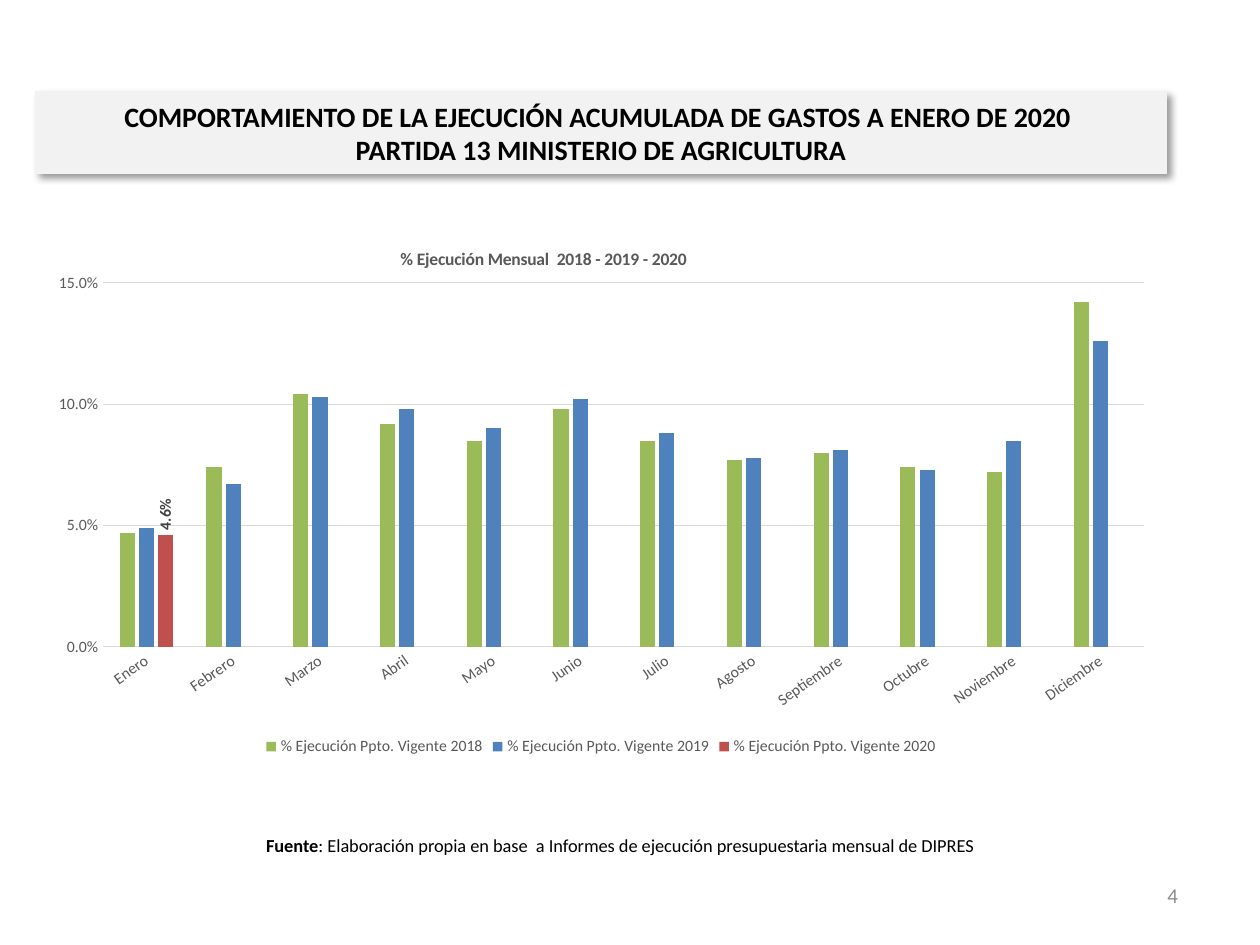
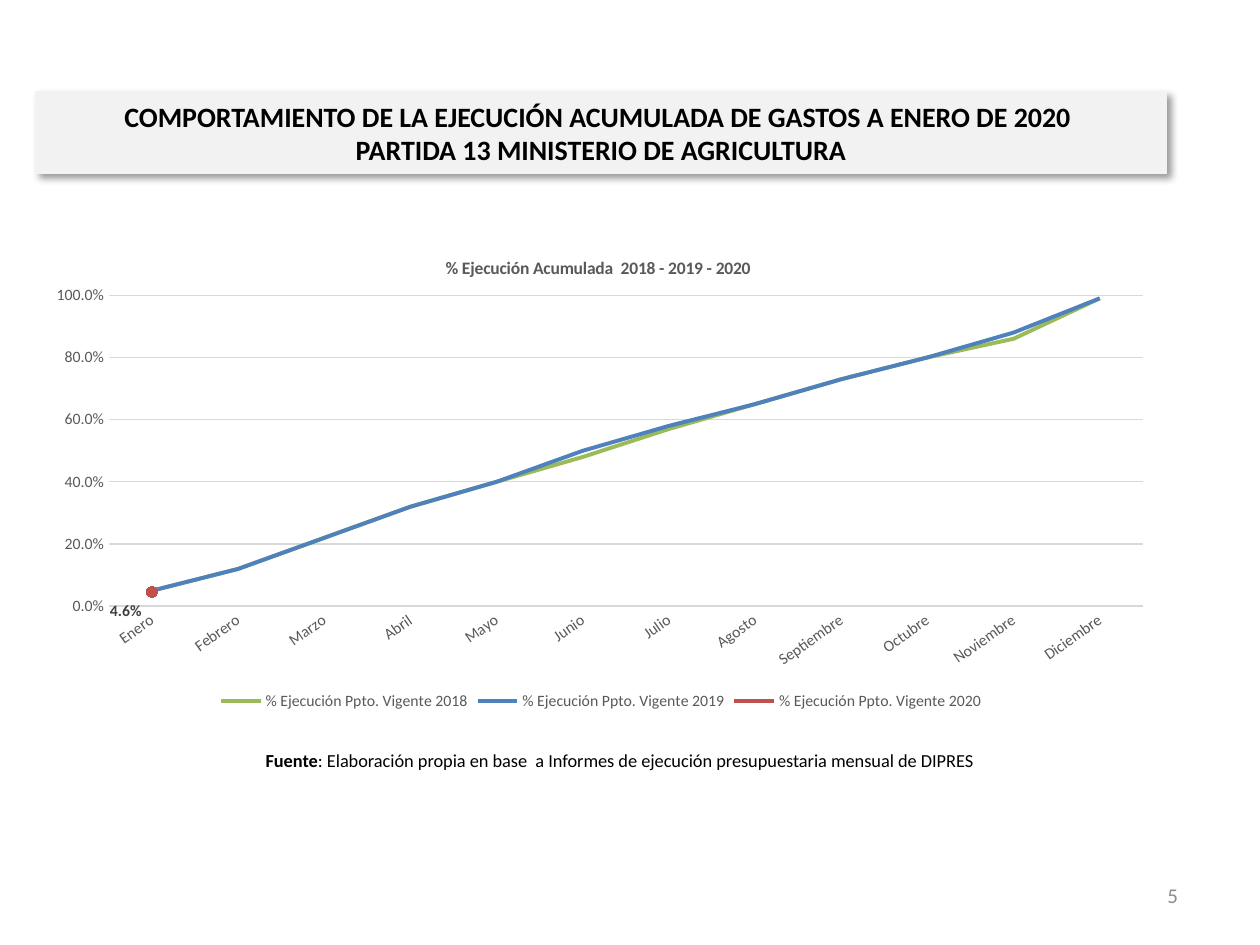
"""Build two slides on the budget execution of the agriculture ministry."""
from lxml.etree import SubElement
from pptx import Presentation
from pptx.chart.data import CategoryChartData
from pptx.dml.color import RGBColor
from pptx.enum.chart import (XL_CHART_TYPE, XL_LABEL_POSITION, XL_LEGEND_POSITION,
                             XL_MARKER_STYLE, XL_TICK_MARK)
from pptx.enum.shapes import MSO_SHAPE
from pptx.enum.text import MSO_ANCHOR, PP_ALIGN
from pptx.oxml import parse_xml
from pptx.oxml.ns import nsdecls, qn
from pptx.util import Cm, Pt

FONT = "Calibri"
BLACK = RGBColor(0x00, 0x00, 0x00)
BAND_GRAY = RGBColor(0xF2, 0xF2, 0xF2)
GRID_GRAY = RGBColor(0xD9, 0xD9, 0xD9)
AXIS_GRAY = RGBColor(0x59, 0x59, 0x59)
LABEL_GRAY = RGBColor(0x40, 0x40, 0x40)
NUMBER_GRAY = RGBColor(0x8C, 0x8C, 0x8C)
SERIES_COLORS = {
    2018: RGBColor(0x9B, 0xBB, 0x59),
    2019: RGBColor(0x4F, 0x81, 0xBD),
    2020: RGBColor(0xC0, 0x50, 0x4D),
}
PERCENT = "0.0%"
BAND_LEFT, BAND_WIDTH = Cm(0.71), Cm(22.81)
BAND_LINES = ("COMPORTAMIENTO DE LA EJECUCIÓN ACUMULADA DE GASTOS A ENERO DE 2020 ",
              "PARTIDA 13 MINISTERIO DE AGRICULTURA")
SOURCE_TEXT = (": Elaboración propia en base  a Informes de ejecución "
               "presupuestaria mensual de DIPRES")
MONTHS = ("Enero", "Febrero", "Marzo", "Abril", "Mayo", "Junio", "Julio", "Agosto",
          "Septiembre", "Octubre", "Noviembre", "Diciembre")
MONTHLY = {
    2018: (0.047, 0.074, 0.104, 0.092, 0.085, 0.098, 0.085, 0.077, 0.08, 0.074, 0.072, 0.142),
    2019: (0.049, 0.067, 0.103, 0.098, 0.09, 0.102, 0.088, 0.078, 0.081, 0.073, 0.085, 0.126),
    2020: (0.046,),
}
ACCUMULATED = {
    2018: (0.05, 0.12, 0.22, 0.32, 0.4, 0.48, 0.57, 0.65, 0.73, 0.8, 0.86, 0.99),
    2019: (0.05, 0.12, 0.22, 0.32, 0.4, 0.5, 0.58, 0.65, 0.73, 0.8, 0.88, 0.99),
    2020: (0.046,),
}


def style_font(font, size, color, bold=False):
    """Set the typeface, size, colour and weight of a font."""
    font.name, font.size, font.bold = FONT, Pt(size), bold
    font.color.rgb = color


def add_run(paragraph, text, size, color, bold=False):
    """Append one styled run to a paragraph."""
    run = paragraph.add_run()
    run.text = text
    style_font(run.font, size, color, bold)


def add_text_box(slide, left, top, width, height, alignment):
    """Add a wrapped, vertically centred text box and return its paragraph."""
    frame = slide.shapes.add_textbox(left, top, width, height).text_frame
    frame.word_wrap = True
    frame.vertical_anchor = MSO_ANCHOR.MIDDLE
    paragraph = frame.paragraphs[0]
    paragraph.alignment = alignment
    return paragraph


def add_shadow(shape):
    """Give a shape a soft shadow towards the lower right."""
    shape.shadow.inherit = False
    effects = shape._element.spPr.find(qn("a:effectLst"))
    shadow = SubElement(effects, qn("a:outerShdw"), blurRad=str(Pt(4)), dist=str(Pt(3)),
                        dir="2700000", algn="tl", rotWithShape="0")
    color = SubElement(shadow, qn("a:srgbClr"), val=str(BLACK))
    SubElement(color, qn("a:alpha"), val="40000")


def add_title_band(slide):
    """Add the grey band with the two-line title."""
    band = slide.shapes.add_shape(MSO_SHAPE.RECTANGLE, BAND_LEFT, Cm(1.85), BAND_WIDTH, Cm(1.65))
    add_shadow(band)
    band.fill.solid()
    band.fill.fore_color.rgb = BAND_GRAY
    band.line.color.rgb = BAND_GRAY
    band.line.width = Pt(0.75)
    band.text_frame.word_wrap = True
    band.text_frame.vertical_anchor = MSO_ANCHOR.MIDDLE
    paragraph = band.text_frame.paragraphs[0]
    paragraph.alignment = PP_ALIGN.CENTER
    first, second = BAND_LINES
    add_run(paragraph, first, 16, BLACK, True)
    paragraph.add_line_break()
    add_run(paragraph, second, 16, BLACK, True)


def add_source(slide, left, top, width, height):
    """Add the centred source line."""
    paragraph = add_text_box(slide, left, top, width, height, PP_ALIGN.CENTER)
    add_run(paragraph, "Fuente", 10.5, BLACK, True)
    add_run(paragraph, SOURCE_TEXT, 10.5, BLACK)


def add_slide(presentation, number):
    """Add a blank slide with its page number and title band."""
    slide = presentation.slides.add_slide(presentation.slide_layouts[6])
    paragraph = add_text_box(slide, Cm(18.08), Cm(17.53), Cm(5.92), Cm(1.02), PP_ALIGN.RIGHT)
    add_run(paragraph, str(number), 12, NUMBER_GRAY)
    add_title_band(slide)
    return slide


def make_layout(x, y, width=None, height=None):
    """Return a manual chart layout in fractions of the chart or label position."""
    layout = parse_xml(f"<c:layout {nsdecls('c')}><c:manualLayout/></c:layout>")
    settings = [("x", x), ("y", y)]
    if width:
        settings = [("layoutTarget", "inner"), ("xMode", "edge"), ("yMode", "edge"),
                    *settings, ("w", width), ("h", height)]
    for name, value in settings:
        SubElement(layout[0], qn(f"c:{name}"), val=str(value))
    return layout


def place_plot(chart, x, y, width, height):
    """Fix the inner plot area of a chart."""
    plot_area = chart._chartSpace.chart.plotArea
    for old_layout in plot_area.findall(qn("c:layout")):
        plot_area.remove(old_layout)
    plot_area.insert(0, make_layout(x, y, width, height))


def set_chart_title(chart, text, x, y):
    """Write the chart title and place its upper left corner."""
    title = chart.chart_title
    add_run(title.text_frame.paragraphs[0], text, 10, AXIS_GRAY, True)
    title.include_in_layout = False
    element = title._element
    for old_layout in element.findall(qn("c:layout")):
        element.remove(old_layout)
    layout = make_layout(x, y)
    for position, mode in enumerate(("xMode", "yMode")):
        layout[0].insert(position, layout.makeelement(qn(f"c:{mode}"), val="edge"))
    element.find(qn("c:tx")).addnext(layout)


def style_axes(chart, maximum, step, line_width):
    """Style both axes and the grid lines."""
    months, values = chart.category_axis, chart.value_axis
    for axis in (months, values):
        axis.major_tick_mark = axis.minor_tick_mark = XL_TICK_MARK.NONE
        style_font(axis.tick_labels.font, 9, AXIS_GRAY)
    months.format.line.color.rgb = GRID_GRAY
    months.format.line.width = Pt(line_width)
    months._element.find(qn("c:txPr")).find(qn("a:bodyPr")).set("rot", str(-35 * 60000))
    values.format.line.fill.background()
    values.minimum_scale, values.maximum_scale, values.major_unit = 0, maximum, step
    values.tick_labels.number_format = PERCENT
    values.tick_labels.number_format_is_linked = False
    values.major_gridlines.format.line.color.rgb = GRID_GRAY
    values.major_gridlines.format.line.width = Pt(0.75)


def add_chart(slide, chart_type, top, height, figures):
    """Add a chart of yearly series by month with a legend below."""
    data = CategoryChartData(number_format=PERCENT)
    data.categories = MONTHS
    for year, values in figures.items():
        padding = (None,) * (len(MONTHS) - len(values))
        data.add_series(f"% Ejecución Ppto. Vigente {year}", values + padding)
    chart = slide.shapes.add_chart(chart_type, BAND_LEFT, top, BAND_WIDTH, height, data).chart
    style_font(chart.font, 10, BLACK)
    chart.has_legend = True
    chart.legend.position = XL_LEGEND_POSITION.BOTTOM
    chart.legend.include_in_layout = False
    style_font(chart.legend.font, 9, AXIS_GRAY)
    return chart


def add_monthly_chart(slide):
    """Add the clustered columns of monthly execution."""
    chart = add_chart(slide, XL_CHART_TYPE.COLUMN_CLUSTERED, Cm(4.39), Cm(10.95), MONTHLY)
    set_chart_title(chart, "% Ejecución Mensual  2018 - 2019 - 2020", 0.32, 0.05)
    place_plot(chart, 0.06, 0.12, 0.92, 0.67)
    style_axes(chart, 0.15, 0.05, 0.75)
    plot = chart.plots[0]
    plot.vary_by_categories = False
    plot.gap_width, plot.overlap = 219, -27
    for series, color in zip(plot.series, SERIES_COLORS.values()):
        series.format.fill.solid()
        series.format.fill.fore_color.rgb = color
    labels = plot.series[2].data_labels
    labels.show_value = True
    labels.number_format, labels.number_format_is_linked = PERCENT, False
    labels.position = XL_LABEL_POSITION.OUTSIDE_END
    style_font(labels.font, 9, LABEL_GRAY, True)
    labels._element.find(qn("c:txPr")).find(qn("a:bodyPr")).set("rot", str(-90 * 60000))


def add_accumulated_chart(slide):
    """Add the lines of accumulated execution."""
    chart = add_chart(slide, XL_CHART_TYPE.LINE, Cm(4.62), Cm(9.8), ACCUMULATED)
    set_chart_title(chart, "% Ejecución Acumulada  2018 - 2019 - 2020", 0.36, 0.05)
    place_plot(chart, 0.065, 0.136, 0.914, 0.64)
    style_axes(chart, 1, 0.2, 1)
    plot = chart.plots[0]
    plot.vary_by_categories = False
    for series, (year, color) in zip(plot.series, SERIES_COLORS.items()):
        series.smooth = False
        series.marker.style = XL_MARKER_STYLE.NONE
        series.format.line.color.rgb = color
        series.format.line.width = Pt(2.75 if year == 2020 else 2.25)
    january = plot.series[2].points[0]
    january.marker.style, january.marker.size = XL_MARKER_STYLE.CIRCLE, 6
    january.marker.format.fill.solid()
    january.marker.format.fill.fore_color.rgb = SERIES_COLORS[2020]
    january.marker.format.line.color.rgb = SERIES_COLORS[2020]
    label = january.data_label
    style_font(label.font, 9, LABEL_GRAY, True)
    label.position = XL_LABEL_POSITION.LEFT
    label._dLbl.find(qn("c:idx")).addnext(make_layout(0, 0.04))


def main():
    """Build and save the presentation."""
    presentation = Presentation()
    presentation.slide_width, presentation.slide_height = Cm(25.4), Cm(19.05)
    monthly_slide = add_slide(presentation, 4)
    add_source(monthly_slide, Cm(2.41), Cm(16.59), Cm(20.19), Cm(0.91))
    add_monthly_chart(monthly_slide)
    accumulated_slide = add_slide(presentation, 5)
    add_source(accumulated_slide, Cm(2.59), Cm(14.81), Cm(19.81), Cm(1.02))
    add_accumulated_chart(accumulated_slide)
    presentation.save("out.pptx")


if __name__ == "__main__":
    main()
